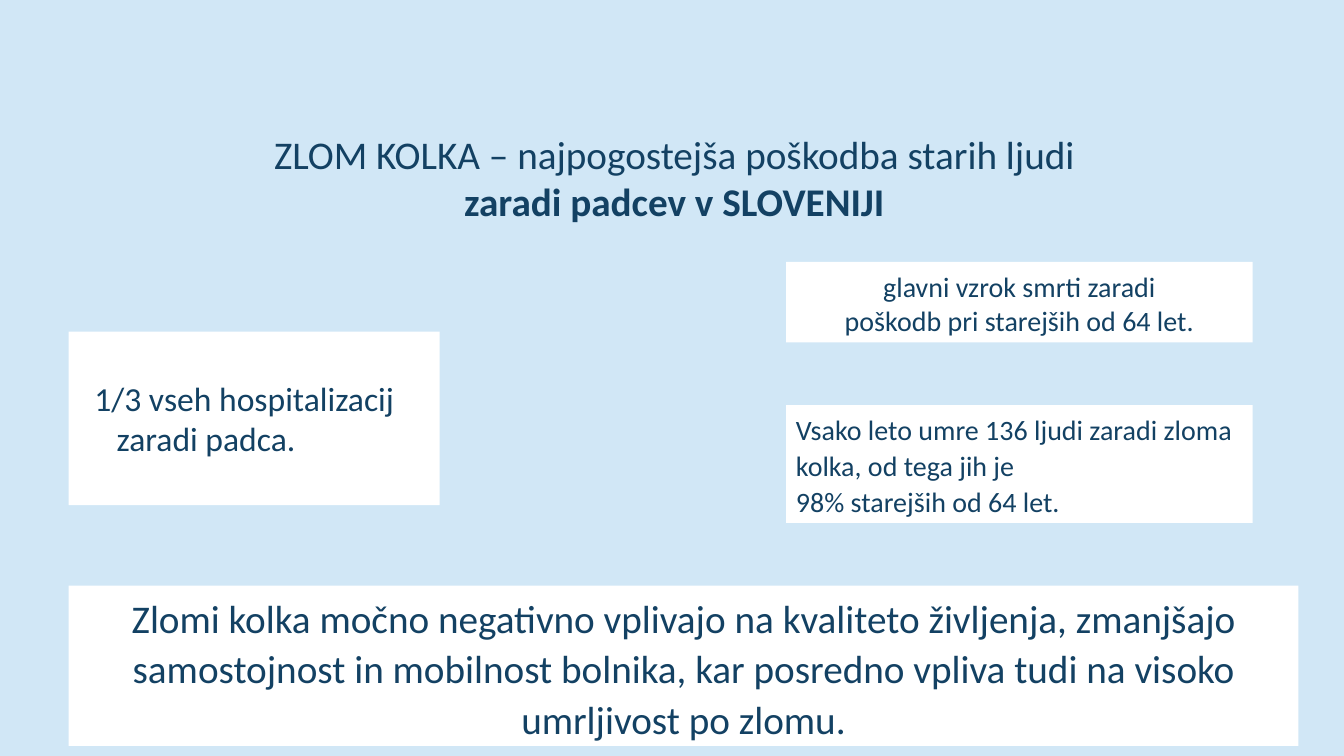
from dataclasses import dataclass

from pptx import Presentation
from pptx.dml.color import RGBColor
from pptx.enum.shapes import MSO_SHAPE
from pptx.enum.text import MSO_ANCHOR, PP_ALIGN
from pptx.slide import Slide
from pptx.text.text import TextFrame
from pptx.util import Cm, Pt

SKY = RGBColor(0xD1, 0xE7, 0xF6)
WHITE = RGBColor(0xFF, 0xFF, 0xFF)
NAVY = RGBColor(0x13, 0x41, 0x63)
FONT = "Calibri"


@dataclass(frozen=True)
class Line:
    text: str
    spacing: float = 1.0
    indent: float = 0.0
    bold: bool = False


@dataclass(frozen=True)
class Panel:
    left: float
    top: float
    width: float
    height: float
    size: int
    lines: tuple[Line, ...]
    align: PP_ALIGN = PP_ALIGN.LEFT
    inset_top: float = 0.13


# Positions and sizes in centimetres
LEFT_EDGE = 1.73
RIGHT_COLUMN, RIGHT_WIDTH = 19.81, 11.76
TITLE = Panel(2.41, 3.15, 29.16, 2.64, 28, (
    Line("ZLOM KOLKA – najpogostejša poškodba starih ljudi"),
    Line("zaradi padcev v SLOVENIJI", bold=True),
), PP_ALIGN.CENTER)
FACTS = (
    Panel(LEFT_EDGE, 8.36, 9.35, 4.37, 24, (
        Line("1/3 vseh hospitalizacij", indent=0.4),
        Line("zaradi padca.", indent=0.96),
    ), inset_top=1.16),
    Panel(RIGHT_COLUMN, 6.6, RIGHT_WIDTH, 2.03, 20, (
        Line("glavni vzrok smrti zaradi", spacing=1.07),
        Line("poškodb pri starejših od 64 let."),
    ), PP_ALIGN.CENTER),
    Panel(RIGHT_COLUMN, 10.21, RIGHT_WIDTH, 2.97, 20, (
        Line("Vsako leto umre 136 ljudi zaradi zloma kolka, od tega jih je", spacing=1.07),
        Line("98% starejših od 64 let.", spacing=1.07),
    )),
    Panel(LEFT_EDGE, 14.76, 30.99, 4.04, 28, (
        Line("Zlomi kolka močno negativno vplivajo na kvaliteto življenja, zmanjšajo "
             "samostojnost in mobilnost bolnika, kar posredno vpliva tudi na visoko "
             "umrljivost po zlomu.", spacing=1.07),
    ), PP_ALIGN.CENTER),
)


def write_line(frame: TextFrame, text: str, *, first: bool, size: int, align: PP_ALIGN,
               spacing: float, indent: float, bold: bool) -> None:
    paragraph = frame.paragraphs[0] if first else frame.add_paragraph()
    paragraph.alignment = align
    paragraph.line_spacing = spacing
    if indent:
        paragraph._p.get_or_add_pPr().set("marL", str(Cm(indent)))
    run = paragraph.add_run()
    run.text = text
    run.font.name = FONT
    run.font.size = Pt(size)
    run.font.bold = bold
    run.font.color.rgb = NAVY


def fill_frame(frame: TextFrame, panel: Panel) -> None:
    frame.word_wrap = True
    frame.vertical_anchor = MSO_ANCHOR.TOP
    frame.margin_top = Cm(panel.inset_top)
    for index, line in enumerate(panel.lines):
        write_line(frame, line.text, first=index == 0, size=panel.size, align=panel.align,
                   spacing=line.spacing, indent=line.indent, bold=line.bold)


def add_panel(slide: Slide, panel: Panel, *, boxed: bool) -> None:
    bounds = [Cm(value) for value in (panel.left, panel.top, panel.width, panel.height)]
    if boxed:
        shape = slide.shapes.add_shape(MSO_SHAPE.RECTANGLE, *bounds)
        shape.shadow.inherit = False
        shape.fill.solid()
        shape.fill.fore_color.rgb = WHITE
        shape.line.fill.background()
    else:
        shape = slide.shapes.add_textbox(*bounds)
    fill_frame(shape.text_frame, panel)


def main() -> None:
    presentation = Presentation()
    presentation.slide_width = Cm(33.87)
    presentation.slide_height = Cm(19.05)
    slide = presentation.slides.add_slide(presentation.slide_layouts[6])

    # Background
    slide.background.fill.solid()
    slide.background.fill.fore_color.rgb = SKY

    # Title and white fact boxes
    add_panel(slide, TITLE, boxed=False)
    for fact in FACTS:
        add_panel(slide, fact, boxed=True)

    presentation.save("out.pptx")


if __name__ == "__main__":
    main()
